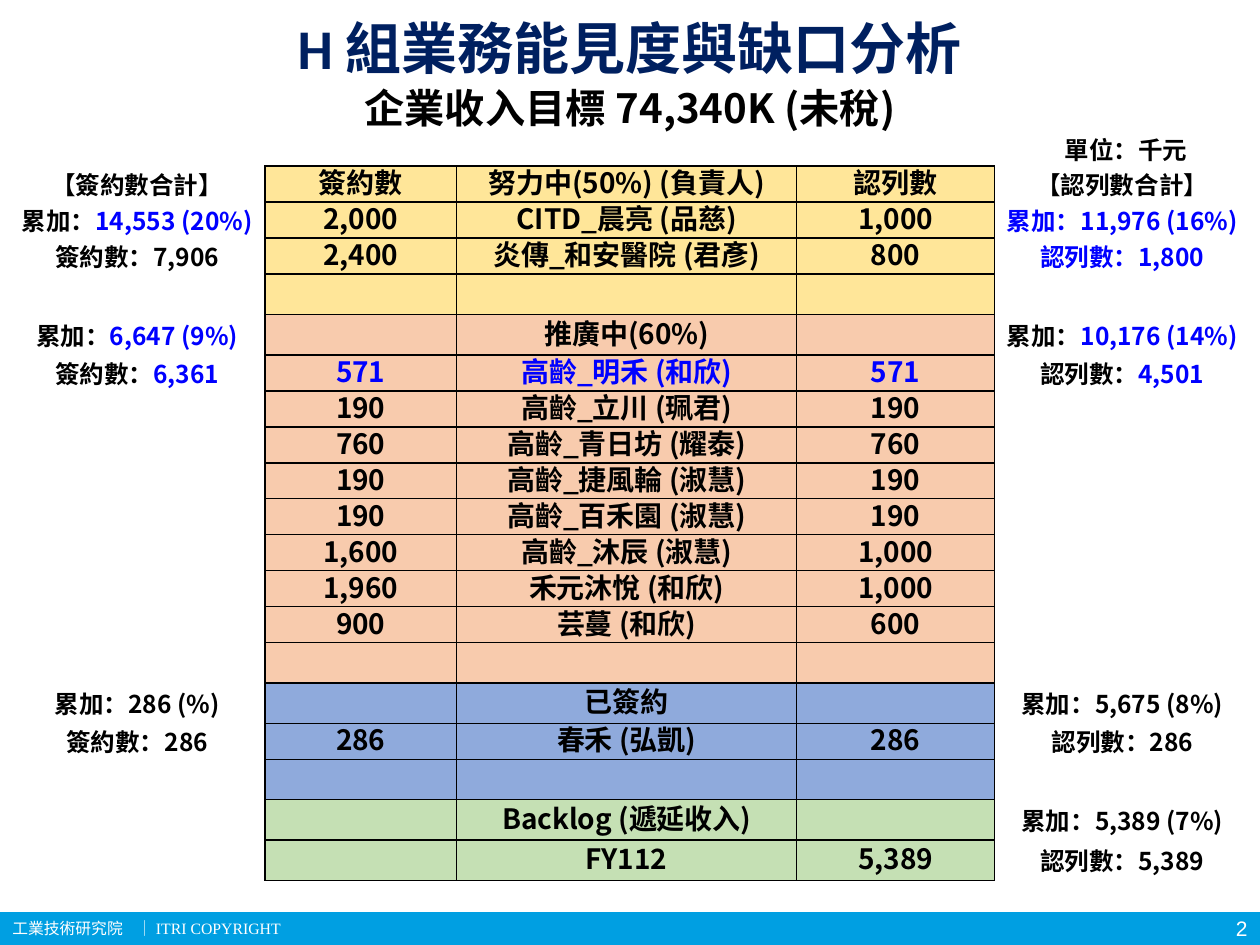
from lxml.etree import SubElement
from pptx import Presentation
from pptx.dml.color import RGBColor
from pptx.enum.shapes import MSO_SHAPE as Shape
from pptx.enum.text import MSO_ANCHOR as Anchor, MSO_AUTO_SIZE as AutoSize, PP_ALIGN as Align
from pptx.oxml.ns import qn
from pptx.util import Pt

CJK = "Noto Sans CJK TC"
BLACK, WHITE, BLUE, NAVY, CYAN = "000000", "FFFFFF", "0000FF", "002060", "009FE2"

STAGES = [
    ("FFE699", [
        ("【簽約數合計】", "簽約數", "努力中(50%) (負責人)", "認列數", "【認列數合計】"),
        ("累加：|14,553 (20%)", "2,000", "CITD_晨亮 (品慈)", "1,000", "|累加：11,976 (16%)"),
        ("簽約數：7,906", "2,400", "炎傳_和安醫院 (君彥)", "800", "|認列數：1,800"),
        ("", "", "", "", ""),
    ]),
    ("F8CBAD", [
        ("累加：|6,647 (9%)", "", "推廣中(60%)", "", "累加：|10,176 (14%)"),
        ("簽約數：|6,361", "|571", "|高齡_明禾 (和欣)", "|571", "認列數：|4,501"),
        ("", "190", "高齡_立川 (珮君)", "190", ""),
        ("", "760", "高齡_青日坊 (耀泰)", "760", ""),
        ("", "190", "高齡_捷風輪 (淑慧)", "190", ""),
        ("", "190", "高齡_百禾園 (淑慧)", "190", ""),
        ("", "1,600", "高齡_沐辰 (淑慧)", "1,000", ""),
        ("", "1,960", "禾元沐悅 (和欣)", "1,000", ""),
        ("", "900", "芸蔓 (和欣)", "600", ""),
        ("", "", "", "", ""),
    ]),
    ("8FAADC", [
        ("累加：286 (%)", "", "已簽約", "", "累加：5,675 (8%)"),
        ("簽約數：286", "286", "春禾 (弘凱)", "286", "認列數：286"),
        ("", "", "", "", ""),
    ]),
    ("C5E0B4", [
        ("", "", "Backlog (遞延收入)", "", "累加：5,389 (7%)"),
        ("", "", "FY112", "5,389", "認列數：5,389"),
    ]),
]


def rgb(color):
    return RGBColor.from_string(color)


class SlideBuilder:
    def __init__(self, slide):
        self.slide = slide

    def style(self, paragraph, size, color=BLACK, font=CJK, bold=True, align=Align.CENTER):
        paragraph.alignment = align
        paragraph.font.size = Pt(size)
        paragraph.font.bold = bold
        paragraph.font.name = font
        paragraph.font.color.rgb = rgb(color)
        defaults = paragraph._p.get_or_add_pPr().find(qn("a:defRPr"))
        SubElement(defaults, qn("a:ea"), typeface=font if "CJK" in font else CJK)

    def fill_frame(self, shape, text, size, tab=None, wrap=True, **look):
        frame = shape.text_frame
        frame.auto_size = AutoSize.NONE
        frame.word_wrap = wrap
        frame.vertical_anchor = Anchor.MIDDLE
        frame.text = text
        paragraph = frame.paragraphs[0]
        if tab:
            stops = SubElement(paragraph._p.get_or_add_pPr(), qn("a:tabLst"))
            SubElement(stops, qn("a:tab"), pos=str(Pt(tab)), algn="l")
        self.style(paragraph, size, **look)

    def title(self, text, left, top, width, height, size, **look):
        title = self.slide.shapes.title
        title.left, title.top, title.width, title.height = map(Pt, (left, top, width, height))
        self.fill_frame(title, text, size, **look)

    def text(self, text, left, top, width, height, size, **look):
        box = self.slide.shapes.add_textbox(*map(Pt, (left, top, width, height)))
        self.fill_frame(box, text, size, **look)

    def bar(self, left, top, width, height, color):
        bar = self.slide.shapes.add_shape(Shape.RECTANGLE, *map(Pt, (left, top, width, height)))
        bar.shadow.inherit = False
        bar.fill.solid()
        bar.fill.fore_color.rgb = rgb(color)
        bar.line.fill.background()

    def borders(self, cell, sides):
        properties = cell._tc.get_or_add_tcPr()
        for position, side in enumerate("LRTB"):
            line = properties.makeelement(qn(f"a:ln{side}"), {"w": str(Pt(1))})
            if side in sides:
                SubElement(SubElement(line, qn("a:solidFill")), qn("a:srgbClr"), val=BLACK)
            else:
                SubElement(line, qn("a:noFill"))
            properties.insert(position, line)

    def cell(self, cell, text, size, fill, sides):
        cell.margin_left = cell.margin_right = cell.margin_top = cell.margin_bottom = 0
        cell.vertical_anchor = Anchor.MIDDLE
        cell.fill.solid()
        cell.fill.fore_color.rgb = rgb(fill)
        self.borders(cell, sides)
        paragraph = cell.text_frame.paragraphs[0]
        paragraph.line_spacing = Pt(20)
        self.style(paragraph, size)
        plain, _, highlight = text.partition("|")
        if plain:
            paragraph.add_run().text = plain
        if highlight:
            run = paragraph.add_run()
            run.text = highlight
            run.font.color.rgb = rgb(BLUE)

    def table(self, stages, left, top, widths, row_height):
        rows = [(color, row) for color, stage in stages for row in stage]
        frame = self.slide.shapes.add_table(
            len(rows), len(widths), Pt(left), Pt(top), Pt(sum(widths)), Pt(row_height * len(rows)))
        table = frame.table
        table.first_row = table.horz_banding = False
        for column, width in zip(table.columns, widths):
            column.width = Pt(width)
        outer = {0: "R", len(widths) - 1: "L"}
        for r, (color, row) in enumerate(rows):
            table.rows[r].height = Pt(row_height)
            for c, text in enumerate(row):
                size, fill = (14, WHITE) if c in outer else (16, color)
                self.cell(table.cell(r, c), text, size, fill, outer.get(c, "LRTB"))


def main():
    deck = Presentation()
    deck.slide_width, deck.slide_height = Pt(720), Pt(540)
    page = SlideBuilder(deck.slides.add_slide(deck.slide_layouts[5]))
    page.bar(0, 521.3, 720, 18.7, CYAN)
    page.text("2", 678, 521.3, 42, 18.7, 12,
              font="Arial", color=WHITE, bold=False, align=Align.RIGHT)
    page.text("工業技術研究院\t│ ITRI COPYRIGHT", 0, 516, 644, 29, 9, tab=71,
              font="Times New Roman", color=WHITE, bold=False, align=Align.LEFT)
    page.title("H 組業務能見度與缺口分析", 34, 6, 652, 42, 32, font="Calibri", color=NAVY)
    page.text("企業收入目標 74,340K (未稅)", 34, 44, 652, 35, 23)
    page.text("單位：千元", 601, 73.5, 85, 24.5, 14, wrap=False, font="Noto Sans CJK SC")
    page.table(STAGES, 5.3, 95, (146.2, 109.4, 194.4, 113, 146.2), 20.57)
    deck.save("out.pptx")


if __name__ == "__main__":
    main()
